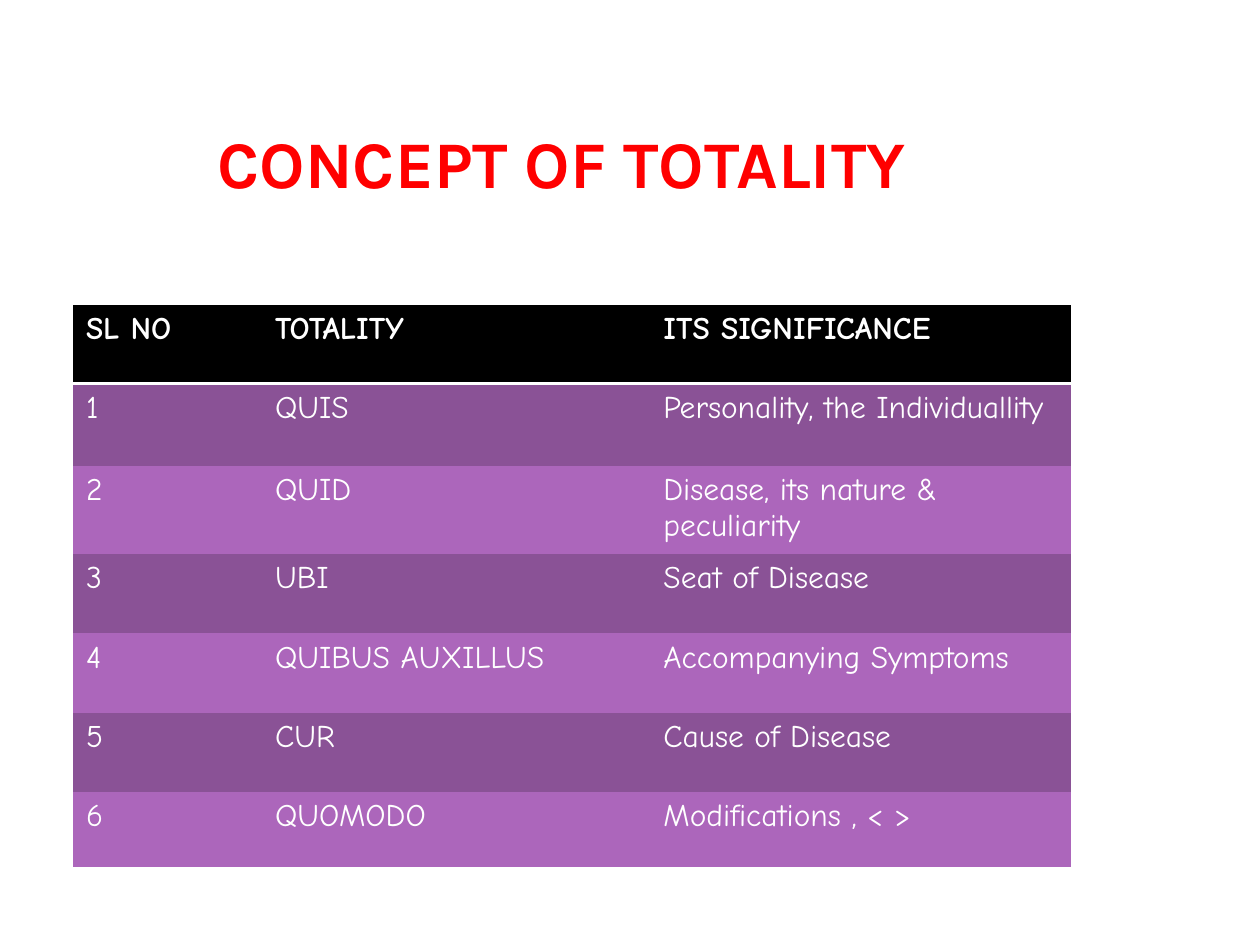
"""Build the slide "Concept of Totality" with its table of six questions."""
from lxml.etree import SubElement
from pptx import Presentation
from pptx.dml.color import RGBColor
from pptx.enum.text import MSO_ANCHOR, PP_ALIGN
from pptx.oxml import parse_xml
from pptx.oxml.ns import nsdecls, qn
from pptx.util import Cm, Pt


def color(hex_value):
    return RGBColor.from_string(hex_value)


def style(font, name, size, hex_value, bold):
    font.name = name
    font.size = Pt(size)
    font.bold = bold
    font.color.rgb = color(hex_value)


HEADER_FILL = "000000"
BAND_FILLS = ["8A5296", "AC66BB"]
NO_STYLE = "{2D5ABB26-0587-4C30-8999-92F81FD0307C}"
COLUMN_WIDTHS = [3.81, 7.83, 8.47]
ROW_HEIGHTS = [1.6, 1.65, 1.65, 1.6, 1.6, 1.6, 1.5]
ROWS = [
    ("SL NO", "TOTALITY", "ITS SIGNIFICANCE"),
    ("1", "QUIS", "Personality, the Individuallity"),
    ("2", "QUID", "Disease, its nature & peculiarity"),
    ("3", "UBI", "Seat of Disease"),
    ("4", "QUIBUS AUXILLUS", "Accompanying Symptoms"),
    ("5", "CUR", "Cause of Disease"),
    ("6", "QUOMODO", "Modifications , < >"),
]

presentation = Presentation()
presentation.slide_width = Cm(25.4)
presentation.slide_height = Cm(19.05)
slide = presentation.slides.add_slide(presentation.slide_layouts[6])

title = slide.shapes.add_textbox(Cm(1.27), Cm(0.89), Cm(20.12), Cm(3.18)).text_frame
title.word_wrap = True
title.vertical_anchor = MSO_ANCHOR.BOTTOM
title.margin_left = title.margin_right = Cm(0.13)
title.margin_top = title.margin_bottom = 0
heading = title.paragraphs[0]
heading.text = "CONCEPT OF TOTALITY"
heading.alignment = PP_ALIGN.CENTER
style(heading.font, "Karla", 38, "FF0000", True)

totality = slide.shapes.add_table(
    len(ROWS), len(COLUMN_WIDTHS), Cm(1.48), Cm(6.14),
    Cm(sum(COLUMN_WIDTHS)), Cm(sum(ROW_HEIGHTS)),
).table
totality.horz_banding = False
table_properties = totality._tbl.tblPr
style_id = table_properties.find(qn("a:tableStyleId"))
if style_id is None:
    style_id = SubElement(table_properties, qn("a:tableStyleId"))
style_id.text = NO_STYLE

for column, width in zip(totality.columns, COLUMN_WIDTHS):
    column.width = Cm(width)

for row_index, (height, entries) in enumerate(zip(ROW_HEIGHTS, ROWS)):
    totality.rows[row_index].height = Cm(height)
    is_header = row_index == 0
    row_fill = HEADER_FILL if is_header else BAND_FILLS[(row_index - 1) % 2]
    for column_index, entry in enumerate(entries):
        cell = totality.cell(row_index, column_index)
        cell.text = entry
        style(cell.text_frame.paragraphs[0].font, "Comic Neue", 18, "FFFFFF", is_header)
        cell.fill.solid()
        cell.fill.fore_color.rgb = color(row_fill)
        if is_header:
            rule = parse_xml(
                f'<a:lnB {nsdecls("a")} w="{Pt(2)}"><a:solidFill>'
                '<a:srgbClr val="FFFFFF"/></a:solidFill></a:lnB>'
            )
            cell._tc.get_or_add_tcPr().insert(0, rule)

presentation.save("out.pptx")
